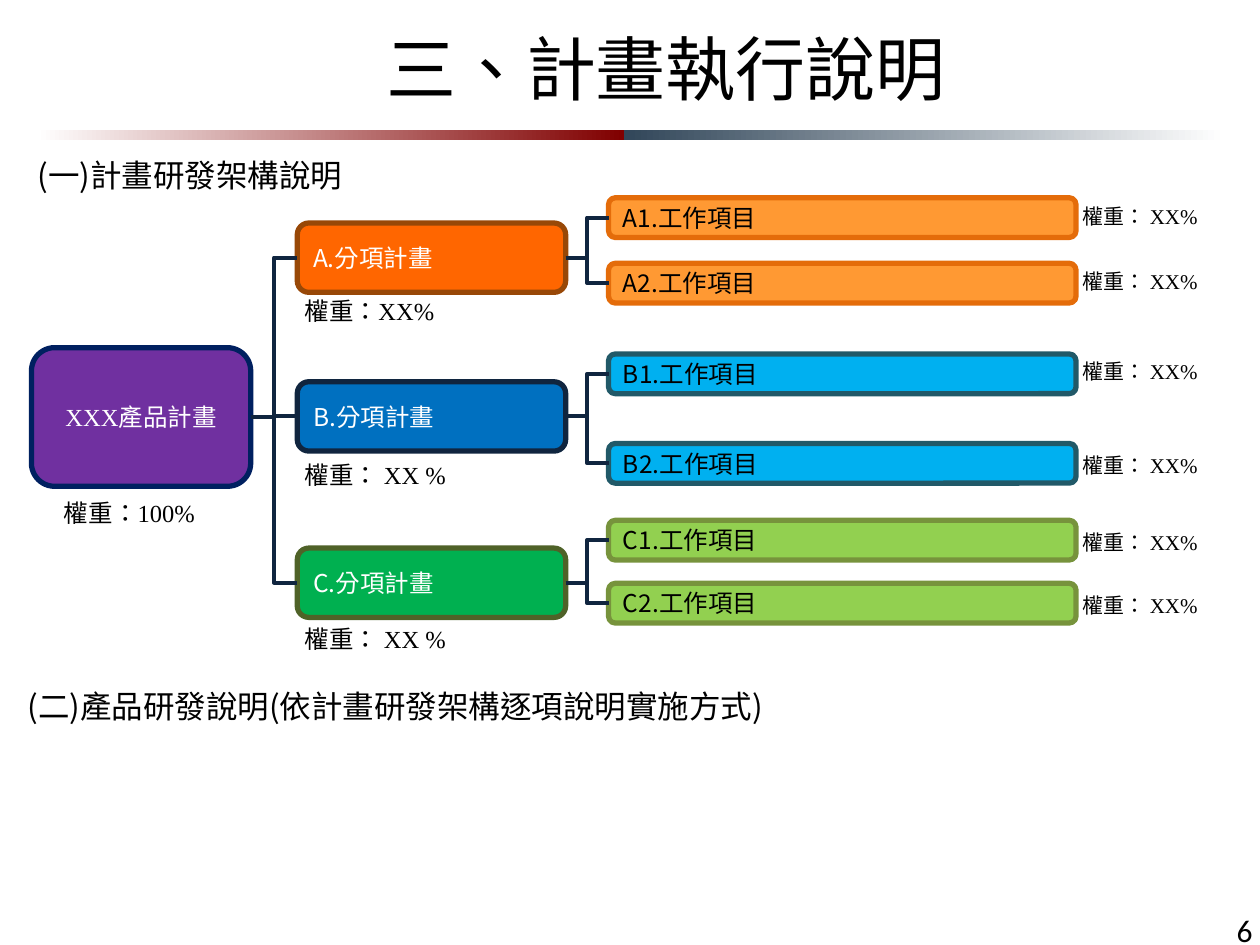
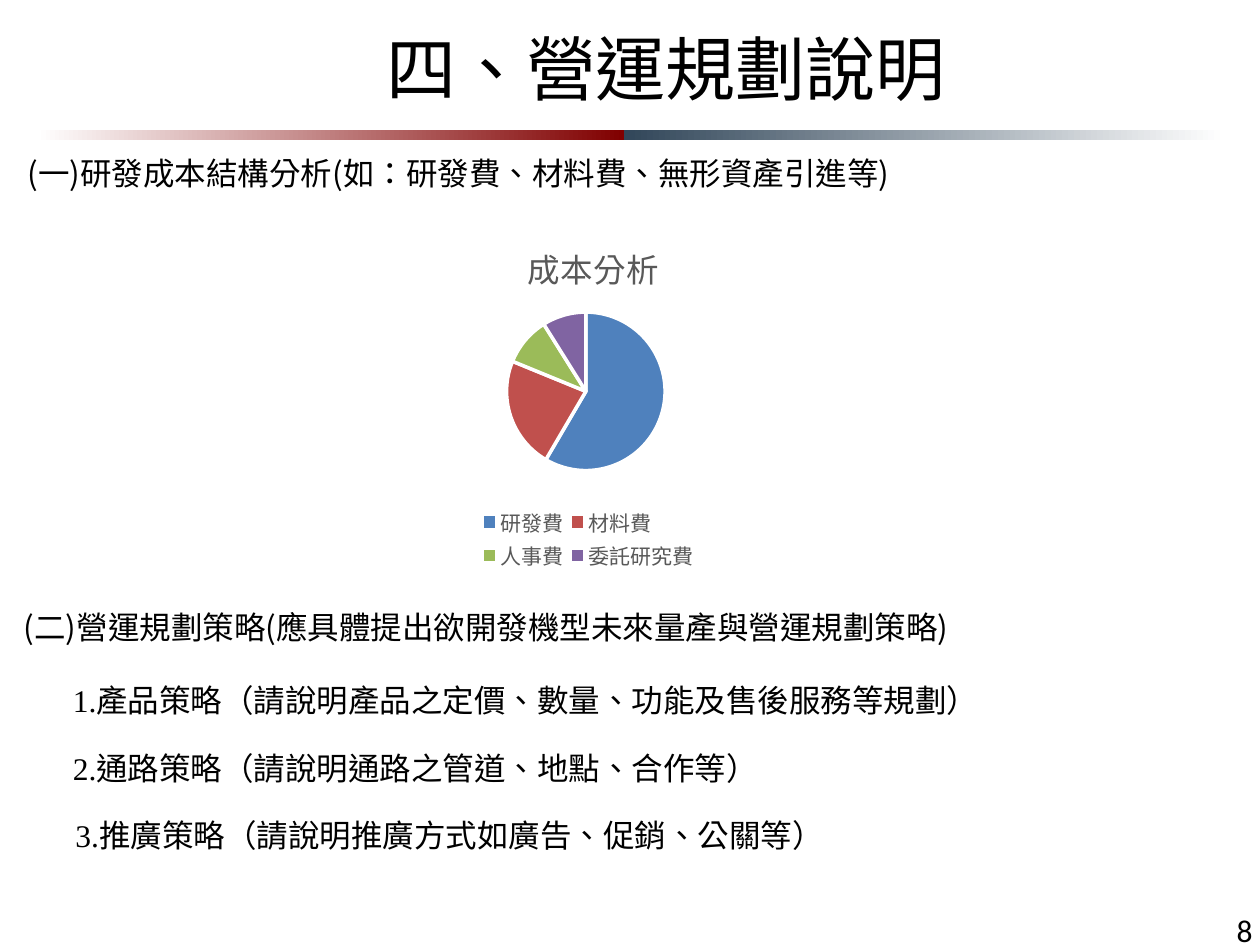
from dataclasses import dataclass

from lxml import etree
from pptx import Presentation
from pptx.chart.data import CategoryChartData
from pptx.dml.color import RGBColor
from pptx.enum.chart import XL_CHART_TYPE, XL_LEGEND_POSITION
from pptx.enum.shapes import MSO_CONNECTOR, MSO_SHAPE
from pptx.enum.text import MSO_ANCHOR, PP_ALIGN
from pptx.oxml.ns import qn
from pptx.util import Inches, Pt

RECT, ROUNDED = MSO_SHAPE.RECTANGLE, MSO_SHAPE.ROUNDED_RECTANGLE
ELBOW = MSO_CONNECTOR.ELBOW
PIE, BOTTOM = XL_CHART_TYPE.PIE, XL_LEGEND_POSITION.BOTTOM
LEFT, CENTER, RIGHT, JUSTIFY = (PP_ALIGN.LEFT, PP_ALIGN.CENTER,
                                PP_ALIGN.RIGHT, PP_ALIGN.JUSTIFY)
TOP, MIDDLE = MSO_ANCHOR.TOP, MSO_ANCHOR.MIDDLE
LEFT_SITE, RIGHT_SITE = 1, 3  # connection sites of a rounded rectangle


@dataclass(frozen=True)
class Theme:
    sans: str = "Noto Sans CJK SC"
    serif: str = "Times New Roman"
    number: str = "Calibri"
    title: float = 40
    heading: float = 18
    box: float = 14
    small: float = 12
    chart_title: float = 18.6
    black: str = "000000"
    white: str = "FFFFFF"
    grey: str = "595959"
    red_band: str = "800000"
    blue_band: str = "314659"
    connector: str = "10253F"
    root: tuple = ("7030A0", "002060")  # fill, outline
    plans: tuple = (("FF6600", "984807"), ("0070C0", "10253F"),
                    ("00B050", "4F6228"))
    tasks: tuple = (("FF9933", "E46C0A"), ("00B0F0", "215968"),
                    ("92D050", "77933C"))
    slices: tuple = ("4F81BD", "C0504D", "9BBB59", "8064A2")


def rgb(value):
    return RGBColor.from_string(value)


def set_layout(parent, index, target=None, **shares):
    """Place a chart part by shares of the chart's size."""
    for old in parent.findall(qn("c:layout")):
        parent.remove(old)
    layout = etree.Element(qn("c:layout"))
    manual = etree.SubElement(layout, qn("c:manualLayout"))
    settings = [("layoutTarget", target)] if target else []
    settings += [("xMode", "edge"), ("yMode", "edge"), *shares.items()]
    for name, value in settings:
        etree.SubElement(manual, qn(f"c:{name}")).set("val", str(value))
    parent.insert(index, layout)


class Deck:
    """Style and current slide, on a grid of 100 columns by 75 rows."""
    COLS, ROWS = 100, 75

    def __init__(self, theme):
        self.theme = theme
        self.prs = Presentation()
        self.prs.slide_width, self.prs.slide_height = Inches(10), Inches(7.5)
        self.s = None

    def grid(self, x, y, w, h):
        col = self.prs.slide_width / self.COLS
        row = self.prs.slide_height / self.ROWS
        return round(x * col), round(y * row), round(w * col), round(h * row)

    def font(self, font, size, color, name):
        font.size, font.name = Pt(size), name
        font.color.rgb = rgb(color)
        rpr = font._rPr
        rpr.set("lang", "zh-TW")
        etree.SubElement(rpr, qn("a:ea")).set("typeface", self.theme.sans)

    def fill_text(self, sp, text, size, color, name, align=LEFT, anchor=TOP,
                  spacing=None, hanging=0):
        tf = sp.text_frame
        tf.word_wrap, tf.vertical_anchor = True, anchor
        tf.text = text
        p = tf.paragraphs[0]
        p.alignment = align
        if spacing:
            p.line_spacing = spacing
        if hanging:
            ppr = p._p.get_or_add_pPr()
            ppr.set("marL", str(Inches(hanging)))
            ppr.set("indent", str(-Inches(hanging)))
        self.font(p.runs[0].font, size, color, name)

    def text(self, cell, text, size, name=None, **style):
        sp = self.s.shapes.add_textbox(*self.grid(*cell))
        self.fill_text(sp, text, size, self.theme.black,
                       name or self.theme.sans, **style)

    def box(self, cell, text, colors, color, name=None, align=LEFT):
        sp = self.s.shapes.add_shape(ROUNDED, *self.grid(*cell))
        sp.shadow.inherit = False
        sp.fill.solid()
        sp.fill.fore_color.rgb = rgb(colors[0])
        sp.line.color.rgb = rgb(colors[1])
        sp.line.width = Pt(3)
        self.fill_text(sp, text, self.theme.box, color,
                       name or self.theme.sans, align=align, anchor=MIDDLE)
        return sp

    def link(self, start, end):
        line = self.s.shapes.add_connector(ELBOW, 0, 0, 0, 0)
        line.begin_connect(start, RIGHT_SITE)
        line.end_connect(end, LEFT_SITE)
        line.line.color.rgb = rgb(self.theme.connector)
        line.line.width = Pt(2.25)
        etree.SubElement(line._element.spPr, qn("a:effectLst"))

    def band(self, cell, *colors):
        sp = self.s.shapes.add_shape(RECT, *self.grid(*cell))
        sp.shadow.inherit = False
        sp.line.fill.background()
        sp.fill.gradient()
        sp.fill.gradient_angle = 0
        for stop, position, color in zip(sp.fill.gradient_stops, (0, 1), colors):
            stop.position, stop.color.rgb = position, rgb(color)

    def slide(self, title, number):
        t = self.theme
        self.s = self.prs.slides.add_slide(self.prs.slide_layouts[6])
        self.band((2.9, 10.3, 46.6, 0.8), t.white, t.red_band)
        self.band((49.5, 10.3, 47.8, 0.8), t.blue_band, t.white)
        self.text((77.1, 71.8, 23.3, 4), number, t.heading, t.number,
                  align=RIGHT, anchor=MIDDLE)
        self.text((13.8, 0.3, 78.1, 10.1), title, t.title,
                  align=CENTER, anchor=MIDDLE)

    def pie(self, cell, title, values):
        t = self.theme
        data = CategoryChartData()
        data.categories = list(values)
        data.add_series("Series 1", list(values.values()))
        chart = self.s.shapes.add_chart(PIE, *self.grid(*cell), data).chart
        self.font(chart.font, t.small, t.black, t.sans)

        # Title
        chart.has_title = True
        tf = chart.chart_title.text_frame
        tf.text = title
        r = tf.paragraphs[0].runs[0]
        self.font(r.font, t.chart_title, t.grey, t.sans)
        r.font.bold = False
        set_layout(chart.chart_title._element, 1, x=0.37, y=0.06)

        # Legend
        chart.has_legend = True
        legend = chart.legend
        legend.position = BOTTOM
        legend.include_in_layout = False
        self.font(legend.font, t.small, t.grey, t.sans)
        set_layout(legend._element, 1, x=0.28, y=0.8, w=0.44, h=0.19)

        # Slices
        plot = chart.plots[0]
        plot.vary_by_categories = True
        for i, color in enumerate(t.slices):
            part = plot.series[0].points[i].format
            part.fill.solid()
            part.fill.fore_color.rgb = rgb(color)
            part.line.color.rgb = rgb(t.white)
            part.line.width = Pt(2)
        set_layout(chart._chartSpace.chart.plotArea, 0, "inner",
                   x=0.34, y=0.27, w=0.31, h=0.44)


def structure_slide(deck):
    t = deck.theme
    deck.slide("三、計畫執行說明", "6")
    deck.text((2, 10.4, 27.3, 5.6), "(一)計畫研發架構說明", t.heading, spacing=1.5)

    # Whole project
    root = deck.box((2.5, 27.6, 17.4, 11), "XXX產品計畫", t.root, t.white,
                    t.serif, CENTER)
    deck.text((4.1, 39, 13.6, 3.4), "權重：100%", t.box, t.serif)

    # Sub-plans: letter, row, weight, then (row, weight row) of each task
    plans = (
        ("A", 17.7, "權重：XX%", ((15.7, 15.7), (20.9, 20.8))),
        ("B", 30.3, "權重： XX %", ((28.1, 28), (35.2, 35.4))),
        ("C", 43.5, "權重： XX %", ((41.3, 41.5), (46.3, 46.5))),
    )
    for i, (letter, row, weight, tasks) in enumerate(plans):
        plan = deck.box((23.6, row, 21.3, 5.5), f"{letter}.分項計畫",
                        t.plans[i], t.white)
        deck.link(root, plan)
        deck.text((23.2, 23 + 13 * i, 16.6, 3.4), weight, t.box, t.serif)
        for n, (task_row, weight_row) in enumerate(tasks, 1):
            task = deck.box((48.3, task_row, 37.1, 3.15),
                            f"{letter}{n}.工作項目", t.tasks[i], t.black)
            deck.link(plan, task)
            deck.text((84.9, weight_row, 14, 3), "權重： XX%", t.small, t.serif)

    deck.text((1.2, 52.5, 62.6, 5.6),
              "(二)產品研發說明(依計畫研發架構逐項說明實施方式)",
              t.heading, spacing=1.5)


def operations_slide(deck):
    t = deck.theme
    deck.slide("四、營運規劃說明", "8")

    # Cost structure
    deck.text((1.2, 11.7, 73.2, 4),
              "(一)研發成本結構分析(如：研發費、材料費、無形資產引進等)",
              t.heading, align=JUSTIFY, hanging=0.49)
    deck.pie((26.4, 16.9, 40.6, 28.9), "成本分析",
             {"研發費": 59, "材料費": 23, "人事費": 10, "委託研究費": 9})

    # Strategies
    deck.text((0.9, 47.8, 85.8, 4),
              "(二)營運規劃策略(應具體提出欲開發機型未來量產與營運規劃策略)",
              t.heading, align=JUSTIFY, hanging=0.49)
    strategies = (
        (4.8, 78, 0.2, "1.產品策略（請說明產品之定價、數量、功能及售後服務等規劃）"),
        (4.8, 59.8, 0.49, "2.通路策略（請說明通路之管道、地點、合作等）"),
        (5, 73.2, 0.49, "3.推廣策略（請說明推廣方式如廣告、促銷、公關等）"),
    )
    for i, (col, width, hanging, strategy) in enumerate(strategies):
        deck.text((col, 53.6 + 5.35 * i, width, 4), strategy, t.heading,
                  t.serif, align=JUSTIFY, hanging=hanging)


def main():
    deck = Deck(Theme())
    structure_slide(deck)
    operations_slide(deck)
    deck.prs.save("out.pptx")


if __name__ == "__main__":
    main()
